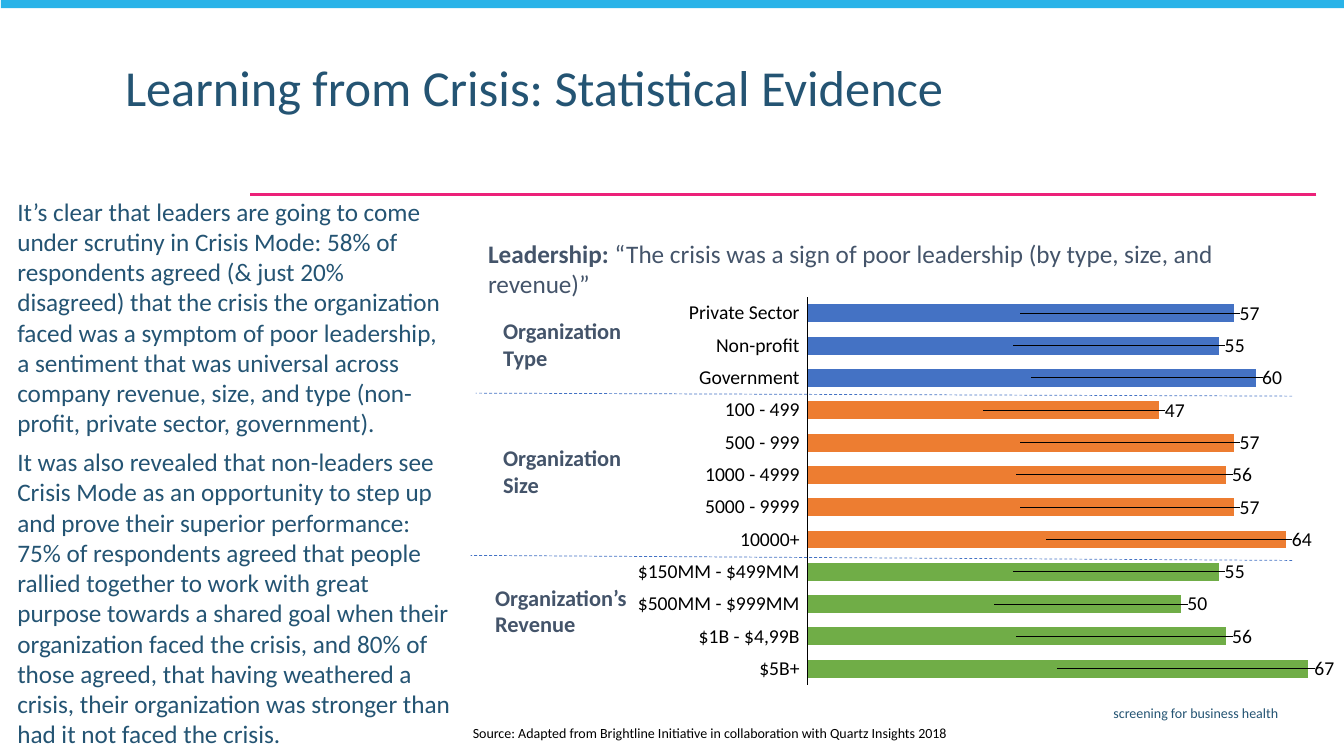
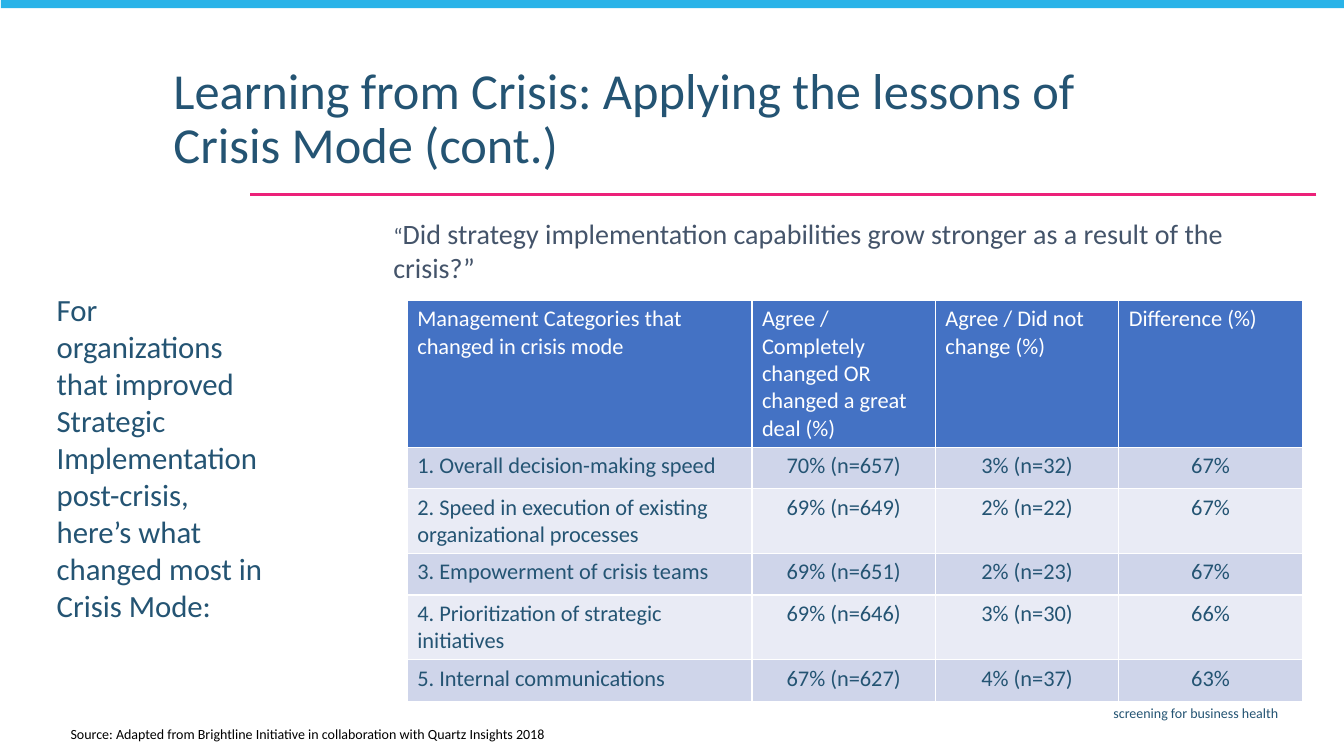
import pptx
import pptx.chart.data
import pptx.dml.color
import pptx.enum.chart
import pptx.enum.dml
import pptx.enum.shapes
import pptx.enum.text
import pptx.oxml
import pptx.oxml.ns
import pptx.util

SLIDE_WIDTH = pptx.util.Inches(13.33)
SLIDE_HEIGHT = pptx.util.Inches(7.5)
COLUMN = SLIDE_WIDTH / 80
ROW = SLIDE_HEIGHT / 45
FONT = "Calibri"
COLORS = {
    "text": "245473", "heading": "44546A", "band": "29B3E8", "rule": "EC2179",
    "black": "000000", "white": "FFFFFF", "blue": "4472C4", "orange": "ED7D31",
    "green": "70AD47", "stripe": "CFD5EA", "pale": "E9EBF5",
}
ALIGN = pptx.enum.text.PP_ALIGN
ANCHOR = pptx.enum.text.MSO_ANCHOR
WIDE_INSETS = (0.55, 0.27)
NARROW_INSETS = (0.25, 0.12)

SOURCE = "Source: Adapted from Brightline Initiative in collaboration with Quartz Insights 2018"
EVIDENCE = [
    "It’s clear that leaders are going to come under scrutiny in Crisis Mode: 58% of respondents "
    "agreed (& just 20% disagreed) that the crisis the organization faced was a symptom of poor "
    "leadership, a sentiment that was universal across company revenue, size, and type "
    "(non-profit, private sector, government).",
    "It was also revealed that non-leaders see Crisis Mode as an opportunity to step up and prove "
    "their superior performance: 75% of respondents agreed that people rallied together to work "
    "with great purpose towards a shared goal when their organization faced the crisis, and 80% "
    "of those agreed, that having weathered a crisis, their organization was stronger than had "
    "it not faced the crisis.",
]
LEADERSHIP = [
    ("Private Sector", 57, "blue"), ("Non-profit", 55, "blue"), ("Government", 60, "blue"),
    ("100 - 499", 47, "orange"), ("500 - 999", 57, "orange"), ("1000 - 4999", 56, "orange"),
    ("5000 - 9999", 57, "orange"), ("10000+", 64, "orange"),
    ("$150MM - $499MM", 55, "green"), ("$500MM - $999MM", 50, "green"),
    ("$1B - $4,99B", 56, "green"), ("$5B+", 67, "green"),
]
GROUPS = [
    ("Organization\nType", 29.7, 18.78),
    ("Organization\nSize", 29.7, 26.34),
    ("Organization’s\nRevenue", 29.22, 34.62),
]
CHANGES = [
    ("Management Categories that changed in crisis mode",
     "Agree / Completely changed OR changed a great deal (%)",
     "Agree / Did not change (%)", "Difference (%)"),
    ("1. Overall decision-making speed", "70% (n=657)", "3% (n=32)", "67%"),
    ("2. Speed in execution of existing organizational processes", "69% (n=649)", "2% (n=22)", "67%"),
    ("3. Empowerment of crisis teams", "69% (n=651)", "2% (n=23)", "67%"),
    ("4. Prioritization of strategic initiatives", "69% (n=646)", "3% (n=30)", "66%"),
    ("5. Internal communications", "67% (n=627)", "4% (n=37)", "63%"),
]
CHART_AREA = (47.52, 17.16, 32.16, 24.18)
PLOT = {"x": 0.017, "y": 0.022, "w": 0.927, "h": 0.955}


def color(name):
    return pptx.dml.color.RGBColor.from_string(COLORS[name])


def columns(count):
    return round(count * COLUMN)


def rows(count):
    return round(count * ROW)


def area(left, top, width, height):
    return columns(left), rows(top), columns(width), rows(height)


def style_font(font, size, name, bold=False):
    font.name = FONT
    font.size = pptx.util.Pt(size)
    font.bold = bold
    font.color.rgb = color(name)


def add_run(paragraph, text, size, name, bold=False):
    for index, line in enumerate(text.split("\n")):
        if index:
            paragraph.add_line_break()
        run = paragraph.add_run()
        run.text = line
        style_font(run.font, size, name, bold)


def set_frame(frame, insets, anchor=ANCHOR.TOP):
    frame.word_wrap = True
    frame.auto_size = pptx.enum.text.MSO_AUTO_SIZE.NONE
    frame.vertical_anchor = anchor
    frame.margin_left = frame.margin_right = columns(insets[0])
    frame.margin_top = frame.margin_bottom = rows(insets[1])


def add_label(slide, place, runs, align=ALIGN.LEFT, anchor=ANCHOR.TOP, insets=NARROW_INSETS, spacing=1.0):
    frame = slide.shapes.add_textbox(*area(*place)).text_frame
    set_frame(frame, insets, anchor)
    paragraph = frame.paragraphs[0]
    paragraph.alignment = align
    paragraph.line_spacing = spacing
    for run in runs:
        add_run(paragraph, *run)


def move(shape, place):
    shape.left, shape.top, shape.width, shape.height = area(*place)


def fill_title(slide, left, top, text):
    title = slide.shapes.title
    move(title, (left, top, 58.08, 4.56))
    set_frame(title.text_frame, (0.6, 0.3))
    paragraph = title.text_frame.paragraphs[0]
    paragraph.alignment = ALIGN.LEFT
    paragraph.line_spacing = 0.9
    add_run(paragraph, text, 36, "text")


def fill_body(slide, place, texts, size):
    body = slide.placeholders[1]
    move(body, place)
    frame = body.text_frame
    set_frame(frame, WIDE_INSETS)
    for index, text in enumerate(texts):
        paragraph = frame.add_paragraph() if index else frame.paragraphs[0]
        properties = paragraph._p.get_or_add_pPr()
        properties.set("marL", "0")
        properties.set("indent", "0")
        properties.append(pptx.oxml.parse_xml(
            f'<a:buNone {pptx.oxml.ns.nsdecls("a")}/>'))
        paragraph.space_before = pptx.util.Pt(6 if index else 0)
        add_run(paragraph, text, size, "text")


def add_line(slide, start, end, name, weight, dashed=False):
    line = slide.shapes.add_connector(
        pptx.enum.shapes.MSO_CONNECTOR.STRAIGHT,
        columns(start[0]), rows(start[1]), columns(end[0]), rows(end[1]))
    line.line.color.rgb = color(name)
    line.line.width = pptx.util.Pt(weight)
    if dashed:
        line.line.dash_style = pptx.enum.dml.MSO_LINE.DASH
    line._element.spPr.append(pptx.oxml.parse_xml(
        f'<a:effectLst {pptx.oxml.ns.nsdecls("a")}/>'))


def add_slide(presentation, title, title_left, title_top, source_left, source_top):
    slide = presentation.slides.add_slide(presentation.slide_layouts[1])
    add_line(slide, (78.36, 11.58), (14.88, 11.58), "rule", 1.5)
    band = slide.shapes.add_shape(
        pptx.enum.shapes.MSO_SHAPE.RECTANGLE, *area(0.06, 0, 79.94, 0.48))
    band.shadow.inherit = False
    band.fill.solid()
    band.fill.fore_color.rgb = color("band")
    band.line.fill.background()
    add_label(slide, (21.9, 41.64, 54.78, 1.74),
              [("screening for business health", 10, "text")], ALIGN.RIGHT, insets=(0.6, 0.3))
    fill_title(slide, title_left, title_top, title)
    add_label(slide, (source_left, source_top, 36.36, 1.62),
              [(SOURCE, 10, "black")], anchor=ANCHOR.BOTTOM, insets=(0.6, 0.3))
    return slide


def manual_layout(values, inner=False):
    target = '<c:layoutTarget val="inner"/>' if inner else ""
    modes = '<c:xMode val="edge"/><c:yMode val="edge"/>' if inner else ""
    numbers = "".join(f'<c:{key} val="{value:.4f}"/>' for key, value in values.items())
    return pptx.oxml.parse_xml(
        f'<c:layout {pptx.oxml.ns.nsdecls("c")}><c:manualLayout>'
        f'{target}{modes}{numbers}</c:manualLayout></c:layout>')


def place_plot(chart):
    plot_area = chart._chartSpace.chart.plotArea
    for layout in plot_area.xpath("c:layout"):
        plot_area.remove(layout)
    plot_area.insert(0, manual_layout(PLOT, inner=True))


def add_leadership_chart(slide):
    labels, values, names = zip(*LEADERSHIP)
    longest = max(values)
    data = pptx.chart.data.CategoryChartData()
    data.categories = [str(number) for number in range(1, len(values) + 1)]
    data.add_series("Series 1", values)
    chart = slide.shapes.add_chart(
        pptx.enum.chart.XL_CHART_TYPE.BAR_STACKED, *area(*CHART_AREA), data).chart
    chart.has_legend = False
    chart.has_title = False
    style_font(chart.font, 10, "black")
    place_plot(chart)

    category_axis = chart.category_axis
    category_axis.reverse_order = True
    category_axis.tick_label_position = pptx.enum.chart.XL_TICK_LABEL_POSITION.NONE
    category_axis.major_tick_mark = pptx.enum.chart.XL_TICK_MARK.NONE
    category_axis.format.line.color.rgb = color("black")
    category_axis.format.line.width = pptx.util.Pt(0.75)
    value_axis = chart.value_axis
    value_axis.minimum_scale = 0
    value_axis.maximum_scale = longest
    value_axis.has_major_gridlines = False
    value_axis.visible = False

    plot = chart.plots[0]
    plot.gap_width = 80
    plot.overlap = 100
    plot.vary_by_categories = False
    series = plot.series[0]
    series.format.fill.solid()
    series.format.fill.fore_color.rgb = color("orange")
    for index, name in enumerate(names):
        point = series.points[index]
        point.format.fill.solid()
        point.format.fill.fore_color.rgb = color(name)
        style_font(point.data_label.font, 14, "black")
        point.data_label.position = pptx.enum.chart.XL_LABEL_POSITION.CENTER
    for value, label in zip(values, series._element.xpath("c:dLbls/c:dLbl")):
        offset = value / longest * PLOT["w"] / 2 + 0.03
        label.insert(1, manual_layout({"x": offset, "y": 0}))

    pitch = CHART_AREA[3] * PLOT["h"] / len(labels)
    first = CHART_AREA[1] + CHART_AREA[3] * PLOT["y"]
    for index, label in enumerate(labels):
        add_label(slide, (37.4, first + index * pitch, 10.2, pitch), [(label, 14, "black")],
                  ALIGN.RIGHT, ANCHOR.MIDDLE, (0, 0), 0.9)


def add_changes_table(slide):
    widths = (20.52, 10.92, 10.92, 10.92)
    height = 2.46
    table = slide.shapes.add_table(
        len(CHANGES), len(widths),
        *area(24.24, 17.88, sum(widths), height * len(CHANGES))).table
    for column, width in zip(table.columns, widths):
        column.width = columns(width)
    for row_index, texts in enumerate(CHANGES):
        table.rows[row_index].height = rows(height)
        fill = "blue" if row_index == 0 else "stripe" if row_index % 2 else "pale"
        for column_index, text in enumerate(texts):
            cell = table.cell(row_index, column_index)
            cell.fill.solid()
            cell.fill.fore_color.rgb = color(fill)
            paragraph = cell.text_frame.paragraphs[0]
            paragraph.alignment = ALIGN.CENTER if row_index and column_index else ALIGN.LEFT
            add_run(paragraph, text, 16, "text" if row_index else "white")


def build_evidence_slide(presentation):
    slide = add_slide(presentation, "Learning from Crisis: Statistical Evidence",
                      6.84, 3.42, 27.54, 42.78)
    fill_body(slide, (0.48, 11.4, 26.94, 33.6), EVIDENCE, 18)
    add_leadership_chart(slide)
    add_label(slide, (28.8, 14.04, 50.04, 2.04), [
        ("Leadership: ", 18, "heading", True),
        ("“The crisis was a sign of poor leadership (by type, size, and revenue)”", 18, "heading")])
    add_line(slide, (76.92, 23.58), (28.32, 23.4), "blue", 0.5, True)
    add_line(slide, (76.92, 33.36), (28.02, 33.06), "blue", 0.5, True)
    for text, left, top in GROUPS:
        add_label(slide, (left, top, 8.58, 3.48), [(text, 16, "heading", True)])


def build_lessons_slide(presentation):
    slide = add_slide(presentation, "Learning from Crisis: Applying the lessons of Crisis Mode (cont.)",
                      9.72, 3.6, 3.6, 42.84)
    fill_body(slide, (2.82, 17.04, 13.8, 18.3), [
        "For organizations that improved Strategic Implementation post-crisis, "
        "here’s what changed most in\nCrisis Mode:"], 22)
    add_label(slide, (23.16, 12.78, 54.06, 4.26), [
        ("“", 16, "heading"),
        ("Did strategy implementation capabilities grow stronger as a result of the crisis?”",
         20, "heading")])
    add_changes_table(slide)


def main():
    presentation = pptx.Presentation()
    presentation.slide_width = SLIDE_WIDTH
    presentation.slide_height = SLIDE_HEIGHT
    build_evidence_slide(presentation)
    build_lessons_slide(presentation)
    presentation.save("out.pptx")


if __name__ == "__main__":
    main()
